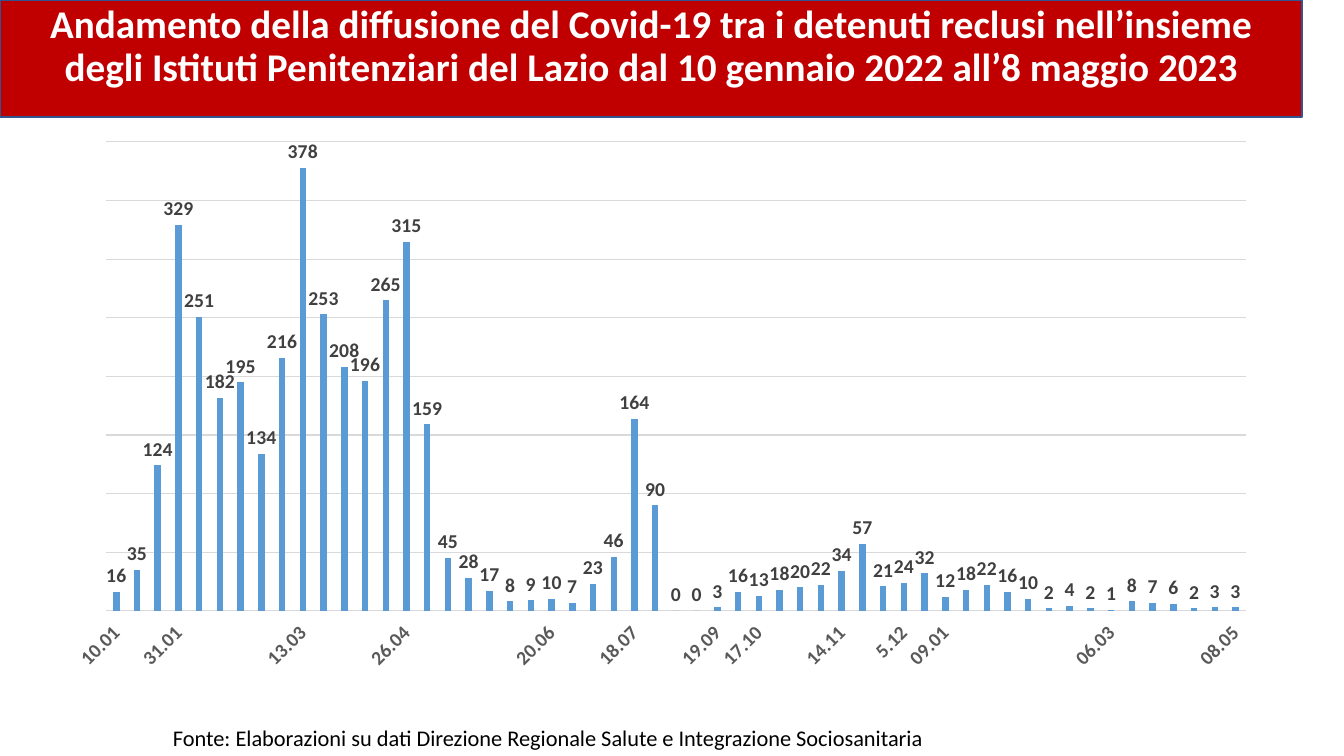
from lxml import etree
from pptx import Presentation
from pptx.chart.data import CategoryChartData
from pptx.dml.color import RGBColor
from pptx.enum.chart import XL_CHART_TYPE as ChartType, XL_LABEL_POSITION as LabelPos
from pptx.enum.chart import XL_TICK_LABEL_POSITION as TickLabels, XL_TICK_MARK as Tick
from pptx.enum.shapes import MSO_SHAPE as Preset
from pptx.enum.text import MSO_ANCHOR as Anchor, MSO_AUTO_SIZE as AutoSize, PP_ALIGN as Align
from pptx.oxml import parse_xml
from pptx.oxml.ns import nsdecls, qn
from pptx.util import Emu, Pt

COLORS = {"banner": "C00000", "edge": "325491", "white": "FFFFFF", "black": "000000",
          "bar": "5B9BD5", "grid": "D9D9D9", "dates": "595959", "labels": "404040"}

# Weekly cases, and the weeks whose date is written
CASES = [16, 35, 124, 329, 251, 182, 195, 134, 216, 378, 253, 208, 196, 265, 315,
         159, 45, 28, 17, 8, 9, 10, 7, 23, 46, 164, 90, 0, 0, 3, 16, 13, 18, 20, 22,
         34, 57, 21, 24, 32, 12, 18, 22, 16, 10, 2, 4, 2, 1, 8, 7, 6, 2, 3, 3]
DATES = {0: "10.01", 3: "31.01", 9: "13.03", 14: "26.04", 21: "20.06", 25: "18.07",
         29: "19.09", 31: "17.10", 35: "14.11", 38: "5.12", 40: "09.01",
         48: "06.03", 54: "08.05"}


class SlideBuilder:
    font_name = "Calibri"

    def __init__(self, slide):
        self.shapes = slide.shapes

    @staticmethod
    def px(*lengths):
        return [Emu(round(length * 914400 / 100.8)) for length in lengths]

    @staticmethod
    def color(name):
        return RGBColor.from_string(COLORS[name])

    def set_font(self, font, size, color, bold=False):
        font.name, font.size, font.bold = self.font_name, Pt(size), bold
        font.color.rgb = self.color(color)

    def set_line(self, line, color, width):
        line.color.rgb = self.color(color)
        line.width = Pt(width)

    def banner(self, box, text):
        banner = self.shapes.add_shape(Preset.RECTANGLE, *self.px(*box))
        banner.shadow.inherit = False
        banner.fill.solid()
        banner.fill.fore_color.rgb = self.color("banner")
        self.set_line(banner.line, "edge", 1)
        frame = banner.text_frame
        frame.word_wrap, frame.vertical_anchor = True, Anchor.TOP
        heading = frame.paragraphs[0]
        heading.text, heading.alignment = text, Align.CENTER
        heading.line_spacing = 0.9
        self.set_font(heading.font, 28, "white", True)

    def caption(self, box, text):
        frame = self.shapes.add_textbox(*self.px(*box)).text_frame
        frame.word_wrap, frame.auto_size = False, AutoSize.SHAPE_TO_FIT_TEXT
        source = frame.paragraphs[0]
        source.text = text
        self.set_font(source.font, 16, "black")

    def column_chart(self, box, plot_box, categories, values):
        data = CategoryChartData()
        data.categories = categories
        data.add_series("Series 1", values)
        chart = self.shapes.add_chart(ChartType.COLUMN_CLUSTERED, *self.px(*box), data).chart
        chart.has_legend = chart.has_title = False
        self.set_font(chart.font, 14, "black", True)

        # Columns and their values
        plot = chart.plots[0]
        plot.gap_width, plot.overlap, plot.vary_by_categories = 219, -27, False
        bars = plot.series[0].format.fill
        bars.solid()
        bars.fore_color.rgb = self.color("bar")
        plot.has_data_labels = True
        labels = plot.data_labels
        labels.show_value, labels.position = True, LabelPos.OUTSIDE_END
        self.set_font(labels.font, 14, "labels", True)

        # Axes
        dates, cases = chart.category_axis, chart.value_axis
        dates.major_tick_mark = dates.minor_tick_mark = Tick.NONE
        dates.tick_label_position = TickLabels.LOW
        self.set_font(dates.tick_labels.font, 14, "dates", True)
        self.set_line(dates.format.line, "grid", 0.75)
        dates_xml = dates.tick_labels._element
        dates_xml.find(qn("c:txPr")).find(qn("a:bodyPr")).set("rot", "-2700000")
        skip = etree.Element(qn("c:tickLblSkip"), val="1")
        dates_xml.find(qn("c:noMultiLvlLbl")).addprevious(skip)
        cases.minimum_scale, cases.maximum_scale, cases.major_unit = 0, 400, 50
        cases.has_major_gridlines = True
        self.set_line(cases.major_gridlines.format.line, "grid", 0.75)
        cases.visible = False

        # Inner plot area, as shares of the chart
        left, top, width, height = box
        x, y, w, h = plot_box
        shares = {"x": (x - left) / width, "y": (y - top) / height,
                  "w": w / width, "h": h / height}
        parts = "".join(f'<c:{key} val="{share:.4f}"/>' for key, share in shares.items())
        layout = parse_xml(
            f'<c:layout {nsdecls("c")}><c:manualLayout><c:layoutTarget val="inner"/>'
            f'<c:xMode val="edge"/><c:yMode val="edge"/>{parts}</c:manualLayout></c:layout>')
        area = chart._chartSpace.chart.plotArea
        for automatic in area.findall(qn("c:layout")):
            area.remove(automatic)
        area.insert(0, layout)


def main():
    deck = Presentation()
    deck.slide_width, deck.slide_height = SlideBuilder.px(1344, 756)
    page = SlideBuilder(deck.slides.add_slide(deck.slide_layouts[6]))

    # Title banner
    page.banner((0, 0, 1302, 117),
                "Andamento della diffusione del Covid-19 tra i detenuti reclusi nell’insieme "
                "degli Istituti Penitenziari del Lazio dal 10 gennaio 2022 all’8 maggio 2023")

    # Source
    page.caption((163, 719, 790, 37),
                 "Fonte: Elaborazioni su dati Direzione Regionale Salute e Integrazione "
                 "Sociosanitaria")

    # Weekly cases
    weeks = [DATES.get(week, "") for week in range(len(CASES))]
    page.column_chart((51, 131, 1219, 544), (106, 142, 1140, 469), weeks, CASES)

    deck.save("out.pptx")


if __name__ == "__main__":
    main()
